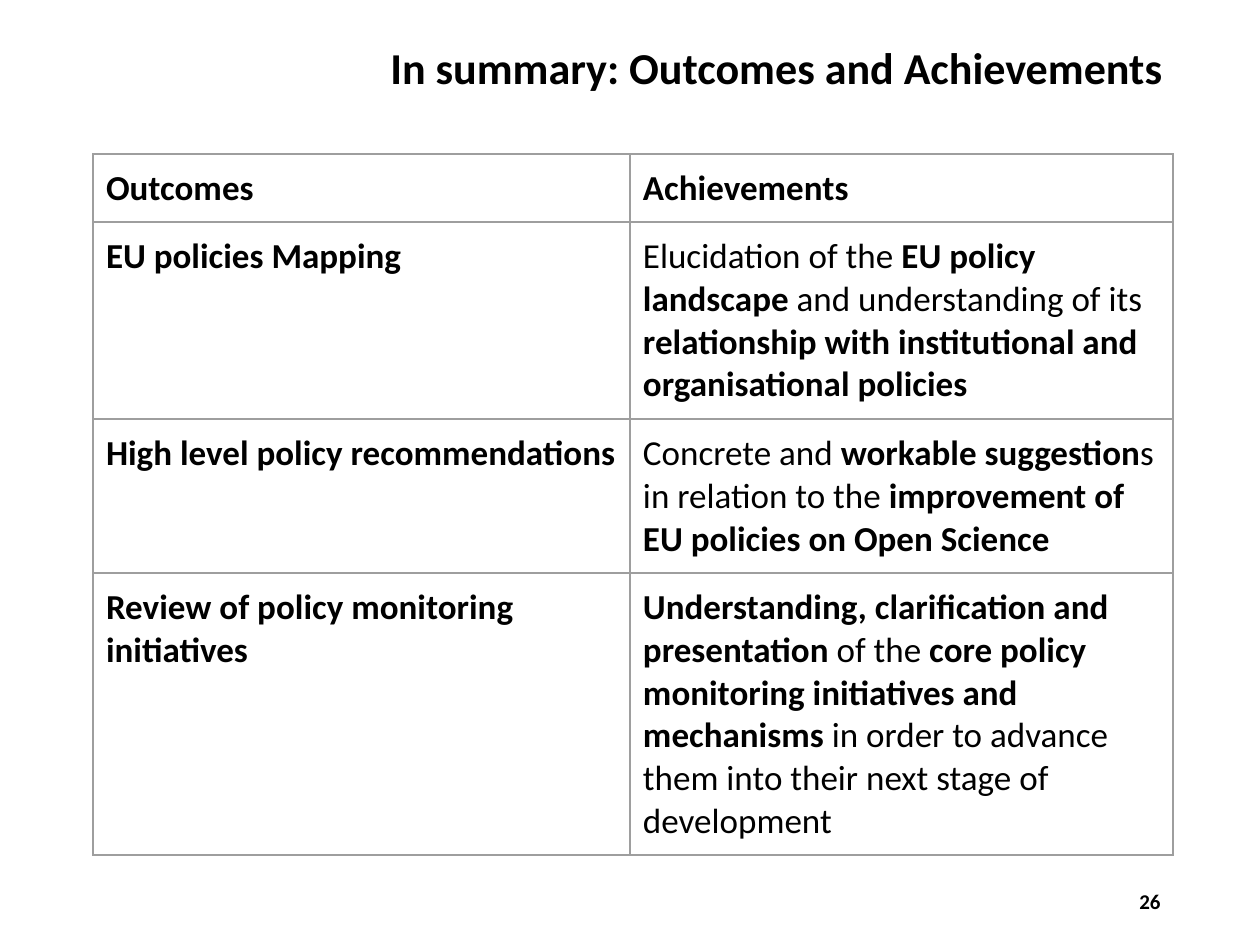
import pptx
import pptx.dml.color
import pptx.enum.text
import pptx.oxml
import pptx.oxml.ns
import pptx.util

PX = 914400 / 126
ALIGN = pptx.enum.text.PP_ALIGN
ANCHOR = pptx.enum.text.MSO_ANCHOR


def px(length):
    return pptx.util.Emu(round(length * PX))


def color(code):
    return pptx.dml.color.RGBColor.from_string(code)


class SummarySlide:
    font_name = "Calibri"
    ink = "000000"
    paper = "FFFFFF"
    rule = "9E9E9E"
    padding = 13

    def __init__(self, presentation):
        self.slide = presentation.slides.add_slide(presentation.slide_layouts[6])

    def fill_paragraph(self, paragraph, marked_text, size):
        parts = marked_text.split("**")
        mixed = any(parts[0::2]) and len(parts) > 1
        for index, part in enumerate(parts):
            if part:
                run = paragraph.add_run()
                run.text = part
                if mixed:
                    run.font.bold = index % 2 == 1
        font = paragraph.font
        font.name = self.font_name
        font.size = pptx.util.Pt(size)
        font.color.rgb = color(self.ink)
        if not mixed:
            font.bold = len(parts) > 1

    def text(self, left, top, width, height, marked_text, size, align, line_spacing=None):
        frame = self.slide.shapes.add_textbox(px(left), px(top), px(width), px(height)).text_frame
        frame.word_wrap = True
        frame.vertical_anchor = ANCHOR.MIDDLE
        paragraph = frame.paragraphs[0]
        paragraph.alignment = align
        paragraph.line_spacing = line_spacing
        self.fill_paragraph(paragraph, marked_text, size)

    def border(self, cell):
        properties = cell._tc.get_or_add_tcPr()
        for position, side in enumerate(("lnL", "lnR", "lnT", "lnB")):
            line = pptx.oxml.parse_xml(
                f'<a:{side} {pptx.oxml.ns.nsdecls("a")} w="{pptx.util.Pt(0.75)}">'
                f'<a:solidFill><a:srgbClr val="{self.rule}"/></a:solidFill></a:{side}>'
            )
            properties.insert(position, line)

    def table(self, left, top, widths, heights, rows, size):
        table = self.slide.shapes.add_table(
            len(rows), len(widths), px(left), px(top), px(sum(widths)), px(sum(heights))
        ).table
        table.first_row = table.horz_banding = False
        for column, width in zip(table.columns, widths):
            column.width = px(width)
        for row, height, texts in zip(table.rows, heights, rows):
            row.height = px(height)
            for cell, marked_text in zip(row.cells, texts):
                cell.margin_left = cell.margin_right = px(self.padding)
                cell.margin_top = cell.margin_bottom = px(self.padding)
                cell.fill.solid()
                cell.fill.fore_color.rgb = color(self.paper)
                self.border(cell)
                self.fill_paragraph(cell.text_frame.paragraphs[0], marked_text, size)


OUTCOMES = [
    ("**Outcomes**", "**Achievements**"),
    (
        "**EU policies Mapping**",
        "Elucidation of the **EU policy landscape** and understanding of its "
        "**relationship with institutional and organisational policies**",
    ),
    (
        "**High level policy recommendations**",
        "Concrete and **workable suggestion**s in relation to the "
        "**improvement of EU policies on Open Science**",
    ),
    (
        "**Review of policy monitoring initiatives**",
        "**Understanding, clarification and presentation** of the** core policy "
        "monitoring initiatives and mechanisms** in order to advance them into "
        "their next stage of development",
    ),
]


def main():
    presentation = pptx.Presentation()
    presentation.slide_width = px(1260)
    presentation.slide_height = px(945)
    summary = SummarySlide(presentation)
    summary.text(378, 19, 882, 103, "**In summary: Outcomes and Achievements**", 25.2, ALIGN.LEFT, 0.9)
    summary.text(1097, 876, 76, 50, "**26**", 12, ALIGN.RIGHT)
    summary.table(93, 154, (537, 543), (68, 197, 154, 282), OUTCOMES, 20)
    presentation.save("out.pptx")


if __name__ == "__main__":
    main()
